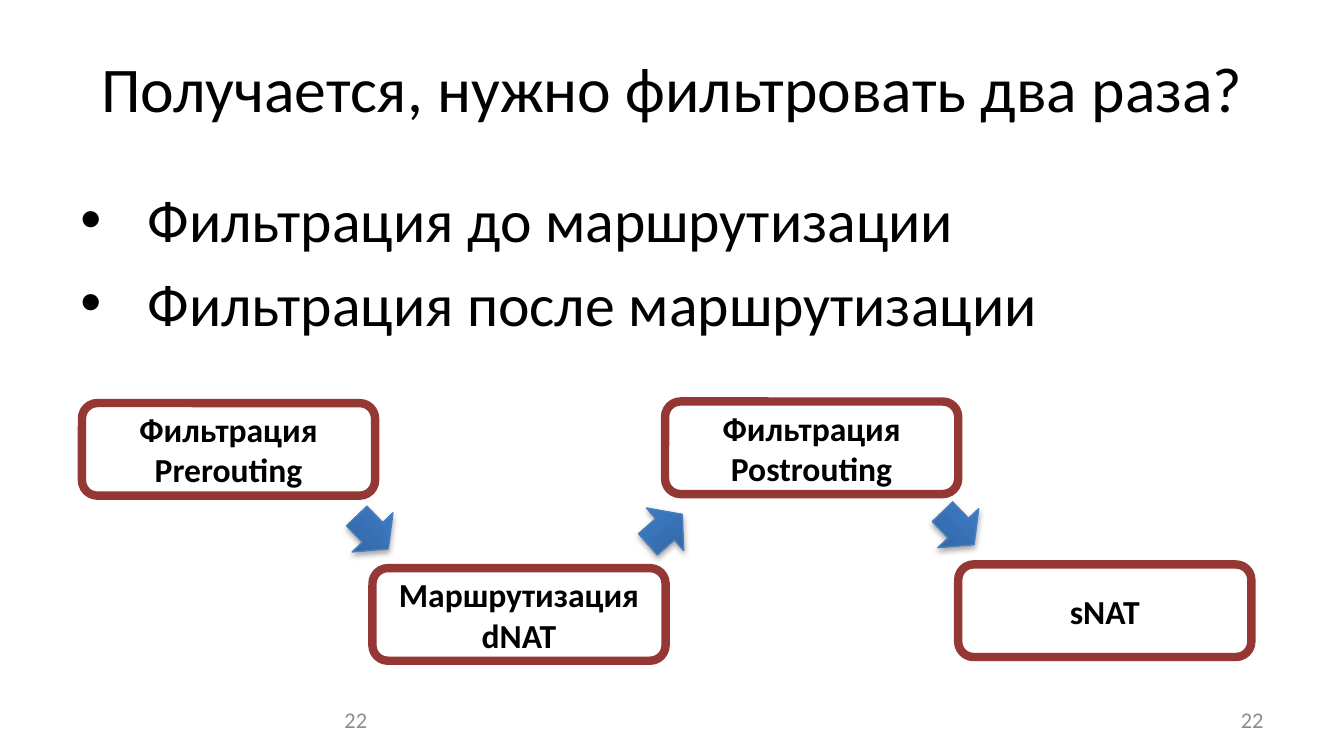
from dataclasses import dataclass

from lxml.etree import SubElement
from pptx import Presentation
from pptx.dml.color import RGBColor
from pptx.enum.shapes import MSO_SHAPE
from pptx.enum.text import MSO_ANCHOR, MSO_AUTO_SIZE, PP_ALIGN
from pptx.oxml import parse_xml
from pptx.oxml.ns import nsdecls, qn
from pptx.slide import Slide
from pptx.text.text import TextFrame
from pptx.util import Cm, Pt


@dataclass(frozen=True)
class Theme:
    font: str = "Calibri"
    title_size: float = 34.1
    bullet_size: float = 32
    stage_size: float = 18
    number_size: float = 12
    ink: str = "000000"
    paper: str = "FFFFFF"
    muted: str = "8C8C8C"
    stage_border: str = "953735"
    arrow_border: str = "4B7EBC"
    arrow_gradient: tuple[tuple[int, str], ...] = (
        (0, "2F5F99"), (80, "3D7CC7"), (100, "3A7CCB"))


@dataclass(frozen=True)
class Stage:
    label: str
    left: float
    top: float


@dataclass(frozen=True)
class Step:
    """An arrow that leads into a stage."""
    target: Stage
    top: float
    rotation: float


THEME = Theme()
STAGE_WIDTH, STAGE_HEIGHT = 5.54, 1.75
ARROW_WIDTH, ARROW_HEIGHT = 0.86, 1.07

PREROUTING = Stage("Фильтрация\nPrerouting", 1.55, 7.62)
ROUTING = Stage("Маршрутизация\ndNAT", 7.04, 10.74)
POSTROUTING = Stage("Фильтрация Postrouting", 12.57, 7.59)
SNAT = Stage("sNAT", 18.11, 10.67)
STAGES = (PREROUTING, ROUTING, POSTROUTING, SNAT)
STEPS = (
    Step(ROUTING, 9.53, 46.2),
    Step(POSTROUTING, 9.47, 318.8),
    Step(SNAT, 9.45, 46.2),
)
BULLETS = ("Фильтрация до маршрутизации", "Фильтрация после маршрутизации")
NUMBER_LEFTS = (1.27, 18.21)


def write(frame: TextFrame, text: str, size: float, align: PP_ALIGN,
          anchor: MSO_ANCHOR = MSO_ANCHOR.MIDDLE, color: str = THEME.ink,
          bold: bool = False) -> None:
    frame.text = text
    frame.word_wrap = True
    frame.auto_size = MSO_AUTO_SIZE.NONE
    frame.vertical_anchor = anchor
    for paragraph in frame.paragraphs:
        paragraph.alignment = align
        for run in paragraph.runs:
            run.font.name = THEME.font
            run.font.size = Pt(size)
            run.font.bold = bold
            run.font.color.rgb = RGBColor.from_string(color)


def add_title(slide: Slide, text: str) -> None:
    title = slide.shapes.title
    title.left, title.top = Cm(1.27), Cm(0.58)
    title.width, title.height = Cm(22.86), Cm(2.39)
    write(title.text_frame, text, THEME.title_size, PP_ALIGN.CENTER)
    title.text_frame.paragraphs[0].line_spacing = 0.8


def add_bullets(slide: Slide, items: tuple[str, ...]) -> None:
    body = slide.shapes.add_textbox(Cm(1.27), Cm(3.33), Cm(22.86), Cm(9.42))
    write(body.text_frame, "\n".join(items), THEME.bullet_size,
          PP_ALIGN.LEFT, MSO_ANCHOR.TOP)
    for paragraph in body.text_frame.paragraphs:
        paragraph.space_before = Pt(6.4)
        properties = paragraph._p.get_or_add_pPr()
        properties.set("marL", str(Cm(1.27)))
        properties.set("indent", str(-Cm(1.27)))
        SubElement(properties, qn("a:buFont")).set("typeface", "Arial")
        SubElement(properties, qn("a:buChar")).set("char", "•")


def add_stage(slide: Slide, stage: Stage) -> None:
    box = slide.shapes.add_shape(
        MSO_SHAPE.ROUNDED_RECTANGLE, Cm(stage.left), Cm(stage.top),
        Cm(STAGE_WIDTH), Cm(STAGE_HEIGHT))
    box.shadow.inherit = False
    box.fill.solid()
    box.fill.fore_color.rgb = RGBColor.from_string(THEME.paper)
    box.line.color.rgb = RGBColor.from_string(THEME.stage_border)
    box.line.width = Pt(4.5)
    write(box.text_frame, stage.label, THEME.stage_size, PP_ALIGN.CENTER,
          bold=True)


def add_step(slide: Slide, step: Step) -> None:
    """Centre the arrow on the left edge of the stage it leads into."""
    arrow = slide.shapes.add_shape(
        MSO_SHAPE.RIGHT_ARROW, Cm(step.target.left - ARROW_WIDTH / 2),
        Cm(step.top), Cm(ARROW_WIDTH), Cm(ARROW_HEIGHT))
    arrow.rotation = step.rotation
    arrow.line.color.rgb = RGBColor.from_string(THEME.arrow_border)
    arrow.line.width = Pt(0.75)
    stops = "".join(
        f'<a:gs pos="{percent * 1000}"><a:srgbClr val="{color}"/></a:gs>'
        for percent, color in THEME.arrow_gradient)
    gradient = parse_xml(
        f'<a:gradFill {nsdecls("a")} rotWithShape="1"><a:gsLst>{stops}</a:gsLst>'
        '<a:lin ang="16200000" scaled="0"/></a:gradFill>')
    shadow = parse_xml(
        f'<a:effectLst {nsdecls("a")}><a:outerShdw blurRad="{Pt(3.1)}" '
        f'dist="{Pt(1.8)}" dir="5400000" rotWithShape="0">'
        f'<a:srgbClr val="{THEME.ink}"><a:alpha val="35000"/></a:srgbClr>'
        '</a:outerShdw></a:effectLst>')
    outline = arrow.line._get_or_add_ln()
    outline.addprevious(gradient)
    outline.addnext(shadow)


def add_number(slide: Slide, left: float) -> None:
    number = slide.shapes.add_textbox(Cm(left), Cm(13.23), Cm(5.92), Cm(0.76))
    write(number.text_frame, "22", THEME.number_size, PP_ALIGN.RIGHT,
          color=THEME.muted)


def main() -> None:
    deck = Presentation()
    deck.slide_width, deck.slide_height = Cm(25.4), Cm(14.29)
    slide = deck.slides.add_slide(deck.slide_layouts.get_by_name("Title Only"))
    add_title(slide, "Получается, нужно фильтровать два раза?")
    add_bullets(slide, BULLETS)
    for stage in STAGES:
        add_stage(slide, stage)
    for step in STEPS:
        add_step(slide, step)
    for left in NUMBER_LEFTS:
        add_number(slide, left)
    deck.save("out.pptx")


if __name__ == "__main__":
    main()
